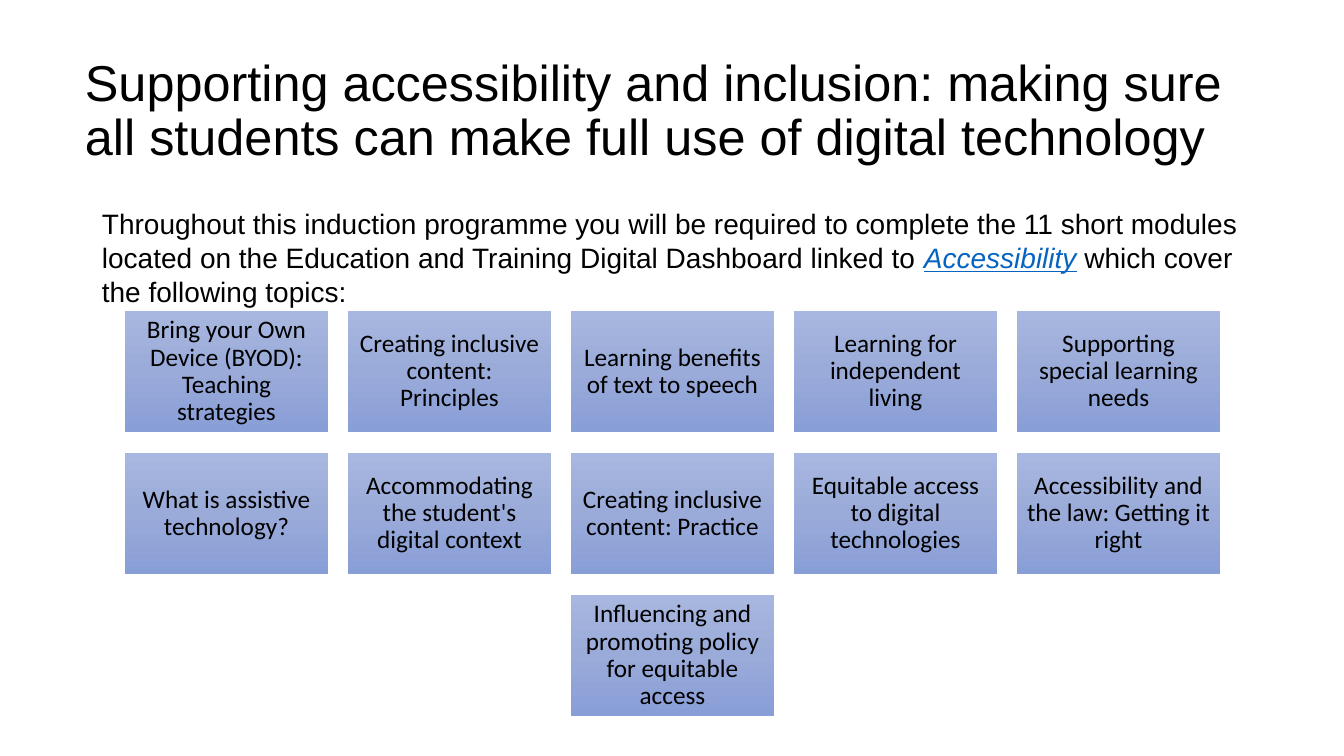
from copy import deepcopy
from dataclasses import dataclass

from pptx import Presentation
from pptx.dml.color import RGBColor
from pptx.enum.shapes import MSO_SHAPE
from pptx.enum.text import MSO_ANCHOR as Anchor, PP_ALIGN as Align
from pptx.oxml.ns import qn
from pptx.shapes.autoshape import Shape
from pptx.slide import Slide
from pptx.text.text import TextFrame
from pptx.util import Emu, Pt

EMU_PER_PX = 914400 / 100.8

BLACK = RGBColor(0x00, 0x00, 0x00)
LINK_BLUE = RGBColor(0x05, 0x63, 0xC1)
TILE_GRADIENT = (
    (0.0, RGBColor(0xA8, 0xB7, 0xDF)),
    (0.5, RGBColor(0x9A, 0xAB, 0xD9)),
    (1.0, RGBColor(0x88, 0x9E, 0xD7)),
)

TILE_WIDTH, TILE_HEIGHT = 203, 121
COLUMN_PITCH, ROW_PITCH = 223, 142
GRID_CENTRE, GRID_TOP = 672, 311
TILE_INSET = 8

TOPIC_ROWS = (
    (
        "Bring your Own Device (BYOD): Teaching strategies",
        "Creating inclusive content: Principles",
        "Learning benefits of text to speech",
        "Learning for independent living",
        "Supporting special learning needs",
    ),
    (
        "What is assistive technology?",
        "Accommodating the student's digital context",
        "Creating inclusive content: Practice",
        "Equitable access to digital technologies",
        "Accessibility and the law: Getting it right",
    ),
    ("Influencing and promoting policy for equitable access",),
)


@dataclass(frozen=True)
class Box:
    left: int
    top: int
    width: int
    height: int

    def emu(self) -> tuple[Emu, ...]:
        return tuple(px(v) for v in (self.left, self.top, self.width, self.height))


@dataclass(frozen=True)
class Style:
    font: str
    size: int
    line_spacing: float
    anchor: Anchor
    align: Align


TITLE_STYLE = Style("Arial", 36, 0.9, Anchor.MIDDLE, Align.LEFT)
INTRO_STYLE = Style("Arial", 20, 1.0, Anchor.TOP, Align.LEFT)
TOPIC_STYLE = Style("Calibri", 18, 0.9, Anchor.MIDDLE, Align.CENTER)


def px(length: int) -> Emu:
    return Emu(round(length * EMU_PER_PX))


def write(frame: TextFrame, style: Style, *wordings: str) -> None:
    """Write one paragraph, with one run for each wording."""
    frame.word_wrap = True
    frame.vertical_anchor = style.anchor
    paragraph = frame.paragraphs[0]
    paragraph.alignment = style.align
    paragraph.line_spacing = style.line_spacing
    paragraph.font.name = style.font
    paragraph.font.size = Pt(style.size)
    paragraph.font.color.rgb = BLACK
    for wording in wordings:
        paragraph.add_run().text = wording


def add_text(slide: Slide, box: Box, style: Style, *wordings: str) -> TextFrame:
    frame = slide.shapes.add_textbox(*box.emu()).text_frame
    write(frame, style, *wordings)
    return frame


def fill_with_gradient(tile: Shape) -> None:
    tile.fill.gradient()
    tile.fill.gradient_angle = 270
    stop_list = next(tile.element.iter(qn("a:gsLst")))
    stop_list.insert(1, deepcopy(stop_list[0]))
    for stop, (position, colour) in zip(tile.fill.gradient_stops, TILE_GRADIENT):
        stop.position = position
        stop.color.rgb = colour


def add_topic(slide: Slide, box: Box, topic: str) -> None:
    tile = slide.shapes.add_shape(MSO_SHAPE.RECTANGLE, *box.emu())
    tile.shadow.inherit = False
    tile.line.fill.background()
    fill_with_gradient(tile)
    frame = tile.text_frame
    frame.margin_left = frame.margin_right = px(TILE_INSET)
    frame.margin_top = frame.margin_bottom = px(TILE_INSET)
    write(frame, TOPIC_STYLE, topic)


def main() -> None:
    deck = Presentation()
    deck.slide_width, deck.slide_height = px(1344), px(756)
    slide = deck.slides.add_slide(deck.slide_layouts[6])

    # Title
    add_text(
        slide, Box(75, 39, 1176, 146), TITLE_STYLE,
        "Supporting accessibility and inclusion: making sure "
        "all students can make full use of digital technology",
    )

    # Introduction, with the module name styled as a link
    intro = add_text(
        slide, Box(92, 202, 1159, 528), INTRO_STYLE,
        "Throughout this induction programme you will be required to complete "
        "the 11 short modules located on the Education and Training Digital "
        "Dashboard linked to ",
        "Accessibility",
        " which cover the following topics:",
    )
    module_font = intro.paragraphs[0].runs[1].font
    module_font.italic = module_font.underline = True
    module_font.color.rgb = LINK_BLUE

    # Topic tiles, each row centred
    for row, topics in enumerate(TOPIC_ROWS):
        row_width = (len(topics) - 1) * COLUMN_PITCH + TILE_WIDTH
        row_left = GRID_CENTRE - row_width // 2
        for column, topic in enumerate(topics):
            box = Box(
                row_left + column * COLUMN_PITCH, GRID_TOP + row * ROW_PITCH,
                TILE_WIDTH, TILE_HEIGHT,
            )
            add_topic(slide, box, topic)

    deck.save("out.pptx")


if __name__ == "__main__":
    main()
